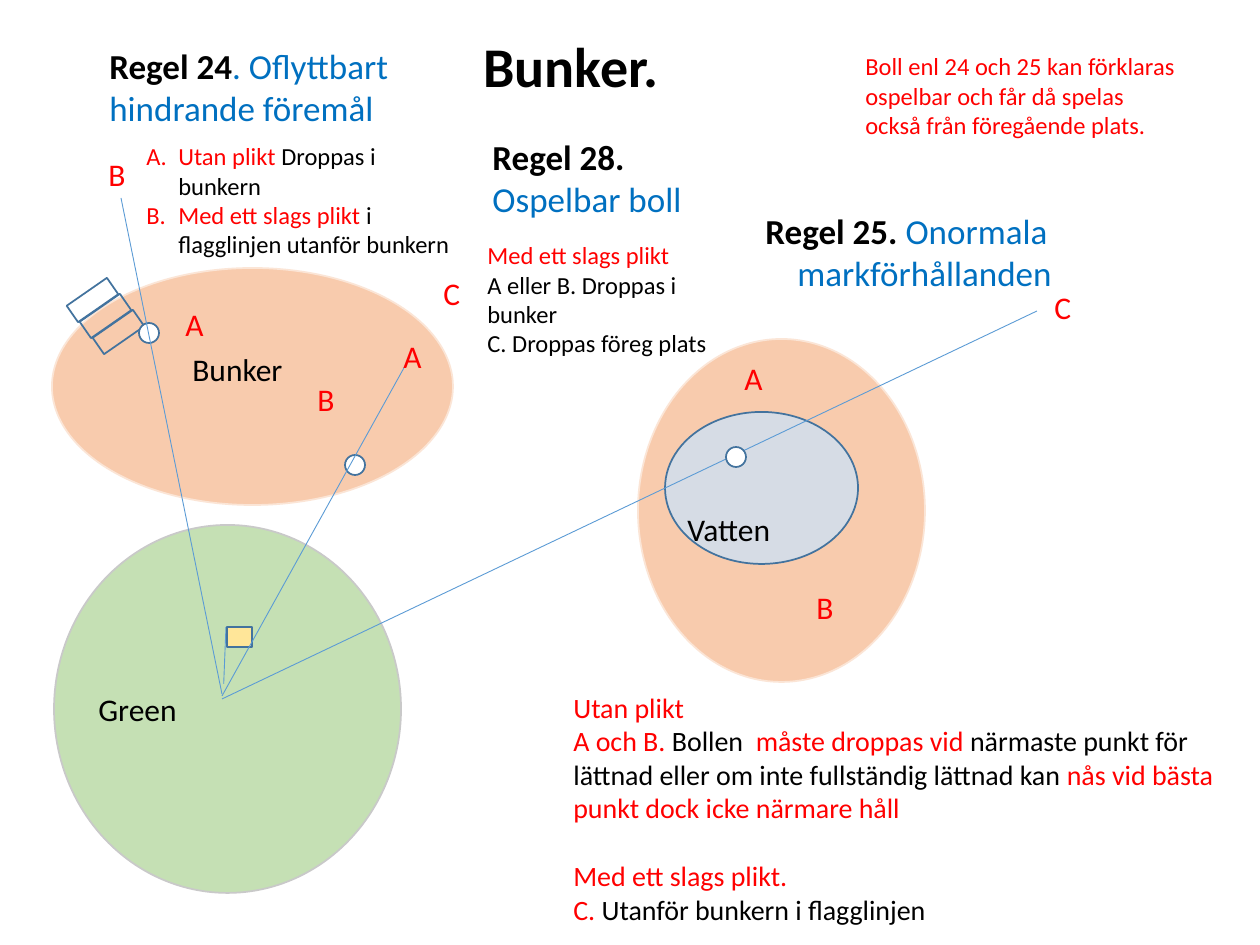
from dataclasses import dataclass
from typing import Optional

from lxml.etree import SubElement
from pptx import Presentation
from pptx.dml.color import RGBColor
from pptx.enum.shapes import MSO_CONNECTOR, MSO_SHAPE
from pptx.enum.text import MSO_AUTO_SIZE
from pptx.oxml.ns import qn
from pptx.util import Emu, Pt

PX_PER_INCH = 126
EMU_PER_PX = 914400 / PX_PER_INCH
FONT = "Calibri"
BALL_SIZE = 20
LABEL_HEIGHT = 50

COLORS = {
    "black": "000000", "red": "FF0000", "blue": "0070C0", "white": "FFFFFF",
    "green": "C5E0B4", "green_edge": "C9C9C9",
    "sand": "F8CBAD", "sand_edge": "FBE5D6",
    "water": "D6DCE5", "flag": "FFE699", "edge": "43739E", "sight": "5B9BD5",
}


@dataclass
class Span:
    text: str
    color: str = "black"
    bold: bool = False


@dataclass
class Para:
    spans: list[Span]
    left: int = 0
    hanging: int = 0
    lettered: bool = False
    space_before: float = 0


@dataclass
class TextBlock:
    left: int
    top: int
    width: int
    height: int
    size: int
    paras: list[Para]


@dataclass
class Label:
    text: str
    left: int
    top: int
    width: int
    color: str = "red"


@dataclass
class Figure:
    kind: MSO_SHAPE
    left: int
    top: int
    width: int
    height: int
    fill: Optional[str]
    edge: str = "edge"
    rotation: float = 0


def px(length: float) -> Emu:
    return Emu(round(length * EMU_PER_PX))


def rgb(name: str) -> RGBColor:
    return RGBColor.from_string(COLORS[name])


def draw_figure(shapes, figure: Figure) -> None:
    shape = shapes.add_shape(figure.kind, px(figure.left), px(figure.top),
                             px(figure.width), px(figure.height))
    shape.shadow.inherit = False
    shape.rotation = figure.rotation
    if figure.fill:
        shape.fill.solid()
        shape.fill.fore_color.rgb = rgb(figure.fill)
    else:
        shape.fill.background()
    shape.line.color.rgb = rgb(figure.edge)
    shape.line.width = Pt(1)


def draw_ball(shapes, left: int, top: int) -> None:
    draw_figure(shapes, Figure(MSO_SHAPE.OVAL, left, top, BALL_SIZE, BALL_SIZE, "white"))


def draw_line(shapes, x1: int, y1: int, x2: int, y2: int) -> None:
    line = shapes.add_connector(MSO_CONNECTOR.STRAIGHT, px(x1), px(y1), px(x2), px(y2))
    line.line.color.rgb = rgb("sight")
    line.line.width = Pt(0.5)
    SubElement(line._element.spPr, qn("a:effectLst"))


def draw_text(shapes, block: TextBlock):
    box = shapes.add_textbox(px(block.left), px(block.top), px(block.width), px(block.height))
    frame = box.text_frame
    frame.word_wrap = True
    frame.auto_size = MSO_AUTO_SIZE.SHAPE_TO_FIT_TEXT
    for index, para in enumerate(block.paras):
        paragraph = frame.add_paragraph() if index else frame.paragraphs[0]
        if para.space_before:
            paragraph.space_before = Pt(para.space_before)
        if para.left:
            properties = paragraph._p.get_or_add_pPr()
            properties.set("marL", str(px(para.left)))
            properties.set("indent", str(px(-para.hanging)))
            if para.lettered:
                SubElement(properties, qn("a:buAutoNum"), type="alphaUcPeriod")
        for span in para.spans:
            run = paragraph.add_run()
            run.text = span.text
            run.font.name = FONT
            run.font.size = Pt(block.size)
            run.font.bold = span.bold
            run.font.color.rgb = rgb(span.color)
    return box


def draw_label(shapes, label: Label):
    return draw_text(shapes, TextBlock(label.left, label.top, label.width, LABEL_HEIGHT, 18,
                                       [Para([Span(label.text, label.color)])]))


LABELS = [
    Label("A", 732, 353, 78), Label("B", 804, 582, 49), Label("C", 1042, 282, 45),
    Label("A", 173, 299, 38), Label("B", 96, 149, 50),
    Label("A", 391, 331, 38), Label("B", 305, 374, 49), Label("C", 431, 268, 45),
    Label("Vatten", 675, 504, 126, "black"), Label("Bunker", 180, 344, 165, "black"),
]

TEXT_BLOCKS = [
    # Title and rule headings
    TextBlock(471, 25, 311, 81, 32, [Para([Span("Bunker.", bold=True)])]),
    TextBlock(97, 38, 355, 97, 20, [Para([
        Span("Regel 24", bold=True), Span(". Oflyttbart hindrande föremål", "blue")])]),
    TextBlock(480, 129, 218, 97, 20, [Para([
        Span("Regel 28. ", bold=True), Span("Ospelbar boll", "blue")])]),
    TextBlock(753, 203, 326, 97, 20, [
        Para([Span("Regel 25. ", bold=True), Span("Onormala", "blue")]),
        Para([Span("markförhållanden", "blue")], left=32)]),
    # Explanations
    TextBlock(134, 135, 338, 131, 14, [
        Para([Span("Utan plikt ", "red"), Span("Droppas i bunkern")], 32, 32, True),
        Para([Span("Med ett slags plikt ", "red"),
              Span("i flagglinjen utanför bunkern")], 32, 32, True)]),
    TextBlock(475, 234, 258, 131, 14, [
        Para([Span("Med ett slags plikt", "red")]),
        Para([Span("A eller B. Droppas i bunker")]),
        Para([Span("C. Droppas föreg plats")])]),
    TextBlock(853, 45, 338, 102, 14, [Para([Span(
        "Boll enl 24 och 25 kan förklaras ospelbar och får då spelas "
        "också från föregående plats.", "red")])]),
    TextBlock(561, 684, 682, 251, 16, [
        Para([Span("Utan plikt", "red")]),
        Para([Span("A och B. ", "red"), Span("Bollen  "), Span("måste droppas vid ", "red"),
              Span("närmaste punkt för lättnad eller om inte fullständig lättnad kan "),
              Span("nås vid bästa punkt dock icke närmare håll", "red")]),
        Para([Span("Med ett slags plikt.", "red")], space_before=19.5),
        Para([Span("C. ", "red"), Span("Utanför bunkern i flagglinjen")])]),
]


def main() -> None:
    deck = Presentation()
    deck.slide_width, deck.slide_height = px(1260), px(945)
    page = deck.slides.add_slide(deck.slide_layouts[6])
    shapes = page.shapes

    # Green with flag
    green = shapes.add_group_shape().shapes
    draw_figure(green, Figure(MSO_SHAPE.OVAL, 54, 525, 347, 368, "green", "green_edge"))
    draw_line(green, 223, 702, 226, 627)
    draw_figure(green, Figure(MSO_SHAPE.RECTANGLE, 227, 627, 25, 20, "flag"))
    green_label = draw_label(green, Label("Green", 86, 684, 154, "black"))
    green_label.fill.solid()
    green_label.fill.fore_color.rgb = rgb("green")

    # Bunker with water
    draw_figure(shapes, Figure(MSO_SHAPE.OVAL, 638, 339, 287, 343, "sand", "sand_edge"))
    draw_figure(shapes, Figure(MSO_SHAPE.OVAL, 665, 412, 193, 152, "water"))
    draw_line(shapes, 222, 699, 1037, 311)
    draw_ball(shapes, 726, 447)

    # Bunker with an immovable obstruction of three planks
    bunker = shapes.add_group_shape().shapes
    draw_figure(bunker, Figure(MSO_SHAPE.OVAL, 52, 268, 401, 237, "sand", "sand_edge"))
    for plank in range(3):
        draw_figure(bunker, Figure(MSO_SHAPE.RECTANGLE, 68 + 13 * plank, 290 + 16 * plank,
                                   49, 20, None, rotation=325.2))
    draw_ball(shapes, 345, 455)
    draw_ball(shapes, 139, 323)
    draw_line(shapes, 222, 694, 121, 198)
    draw_line(shapes, 222, 696, 410, 357)

    # Wording
    for block in TEXT_BLOCKS:
        draw_text(shapes, block)
    for label in LABELS:
        draw_label(shapes, label)

    deck.save("out.pptx")


if __name__ == "__main__":
    main()
